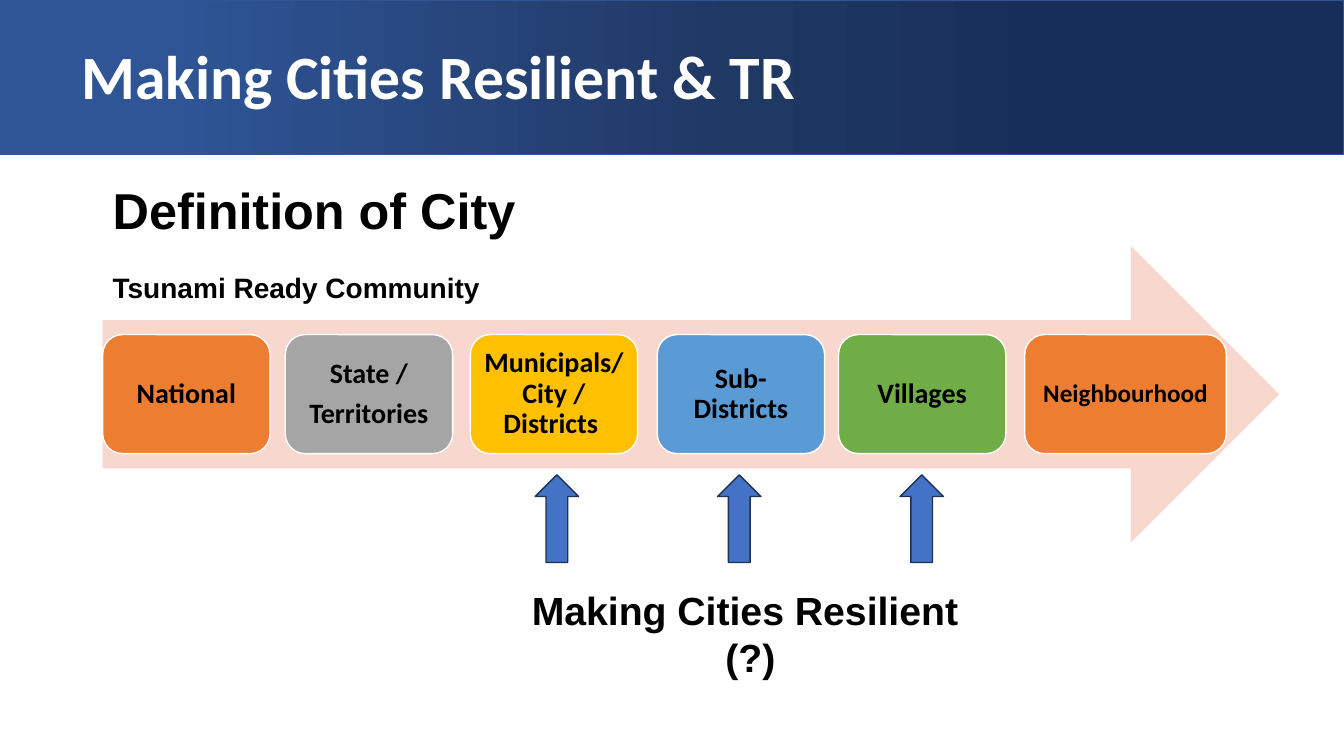
import copy
from dataclasses import dataclass

import pptx
import pptx.dml.color
import pptx.enum.shapes
import pptx.enum.text
import pptx.oxml.ns
import pptx.util

Pt = pptx.util.Pt
SHAPE = pptx.enum.shapes.MSO_SHAPE
ALIGN = pptx.enum.text.PP_ALIGN
ANCHOR = pptx.enum.text.MSO_ANCHOR


@dataclass(frozen=True)
class Theme:
    heading_font: str = "Calibri"
    body_font: str = "Arial"
    white: str = "FFFFFF"
    black: str = "000000"
    banner: tuple = ((21, "162E59"), (45, "203864"), (88, "2F5597"))
    banner_line: str = "325491"
    band: str = "F8D7CE"
    orange: str = "ED7D31"
    grey: str = "A5A5A5"
    yellow: str = "FFC000"
    light_blue: str = "5B9BD5"
    green: str = "70AD47"
    pointer: str = "4472C4"
    pointer_line: str = "1E3256"
    title: int = 44
    subtitle: int = 36
    question: int = 28
    label: int = 20
    small_label: int = 18


THEME = Theme()

# Left, width, text lines, fill, type size
LEVELS = [
    (73.4, 119.5, ["National"], THEME.orange, THEME.label),
    (203.8, 119.5, ["State /", "Territories"], THEME.grey, THEME.label),
    (336, 119.5, ["Municipals/ City / Districts "], THEME.yellow, THEME.label),
    (469.5, 119.5, ["Sub-Districts"], THEME.light_blue, THEME.label),
    (599, 119.5, ["Villages"], THEME.green, THEME.label),
    (732, 144, ["Neighbourhood"], THEME.orange, THEME.small_label),
]


def rgb(value):
    return pptx.dml.color.RGBColor.from_string(value)


def add_shape(s, kind, box, fill=None, line=None):
    sp = s.shapes.add_shape(kind, *map(Pt, box))
    sp.shadow.inherit = False
    if fill:
        sp.fill.solid()
        sp.fill.fore_color.rgb = rgb(fill)
    if line:
        sp.line.color.rgb = rgb(line)
        sp.line.width = Pt(1)
    else:
        sp.line.fill.background()
    return sp


def write(tf, lines, font, size, color=THEME.black, align=ALIGN.LEFT,
          spacing=None, after=None):
    tf.word_wrap = True
    for i, text in enumerate(lines):
        p = tf.paragraphs[0] if i == 0 else tf.add_paragraph()
        p.text = text
        p.alignment = align
        p.line_spacing = spacing
        p.space_after = after
        p.font.name = font
        p.font.size = Pt(size)
        p.font.bold = True
        p.font.color.rgb = rgb(color)


def add_text(s, box, lines, font, size, anchor=ANCHOR.TOP, **style):
    tf = s.shapes.add_textbox(*map(Pt, box)).text_frame
    tf.vertical_anchor = anchor
    write(tf, lines, font, size, **style)


def add_banner(s):
    sp = add_shape(s, SHAPE.RECTANGLE, (0, 0, 960, 110.4), line=THEME.banner_line)
    sp.fill.gradient()
    sp.fill.gradient_angle = 180
    stops = sp._element.spPr.find(".//" + pptx.oxml.ns.qn("a:gsLst"))
    stops.append(copy.deepcopy(stops[0]))
    for stop, (position, color) in zip(sp.fill.gradient_stops, THEME.banner):
        stop.position = position / 100
        stop.color.rgb = rgb(color)


def add_level(s, left, width, lines, fill, size):
    sp = add_shape(s, SHAPE.ROUNDED_RECTANGLE, (left, 239, width, 85), fill, THEME.white)
    tf = sp.text_frame
    tf.margin_left = tf.margin_right = tf.margin_top = tf.margin_bottom = Pt(size * 0.29)
    tf.vertical_anchor = ANCHOR.MIDDLE
    write(tf, lines, THEME.heading_font, size, align=ALIGN.CENTER,
          spacing=0.9, after=Pt(size * 0.35))


def main():
    prs = pptx.Presentation()
    prs.slide_width, prs.slide_height = Pt(960), Pt(540)
    s = prs.slides.add_slide(prs.slide_layouts[6])

    # Title banner
    add_banner(s)
    add_text(s, (51, 17, 700, 80), ["Making Cities Resilient & TR"], THEME.heading_font,
             THEME.title, anchor=ANCHOR.MIDDLE, color=THEME.white, spacing=0.9)

    # Administrative levels along the wide arrow
    add_shape(s, SHAPE.RIGHT_ARROW, (73.4, 175.8, 840.3, 211.7), THEME.band)
    for level in LEVELS:
        add_level(s, *level)

    # Headings and question
    add_text(s, (73.4, 124.6, 454, 51), ["Definition of City"],
             THEME.body_font, THEME.subtitle)
    add_text(s, (73.4, 190, 454, 32), ["Tsunami Ready Community"],
             THEME.body_font, THEME.label)
    add_text(s, (345, 415.5, 382, 75), ["Making Cities Resilient ", "(?)"],
             THEME.body_font, THEME.question, align=ALIGN.CENTER)

    # Pointers to the levels in question
    for i in range(3):
        add_shape(s, SHAPE.UP_ARROW, (382.3 + 130.3 * i, 339.2, 31, 62.6),
                  THEME.pointer, THEME.pointer_line)

    prs.save("out.pptx")


if __name__ == "__main__":
    main()
